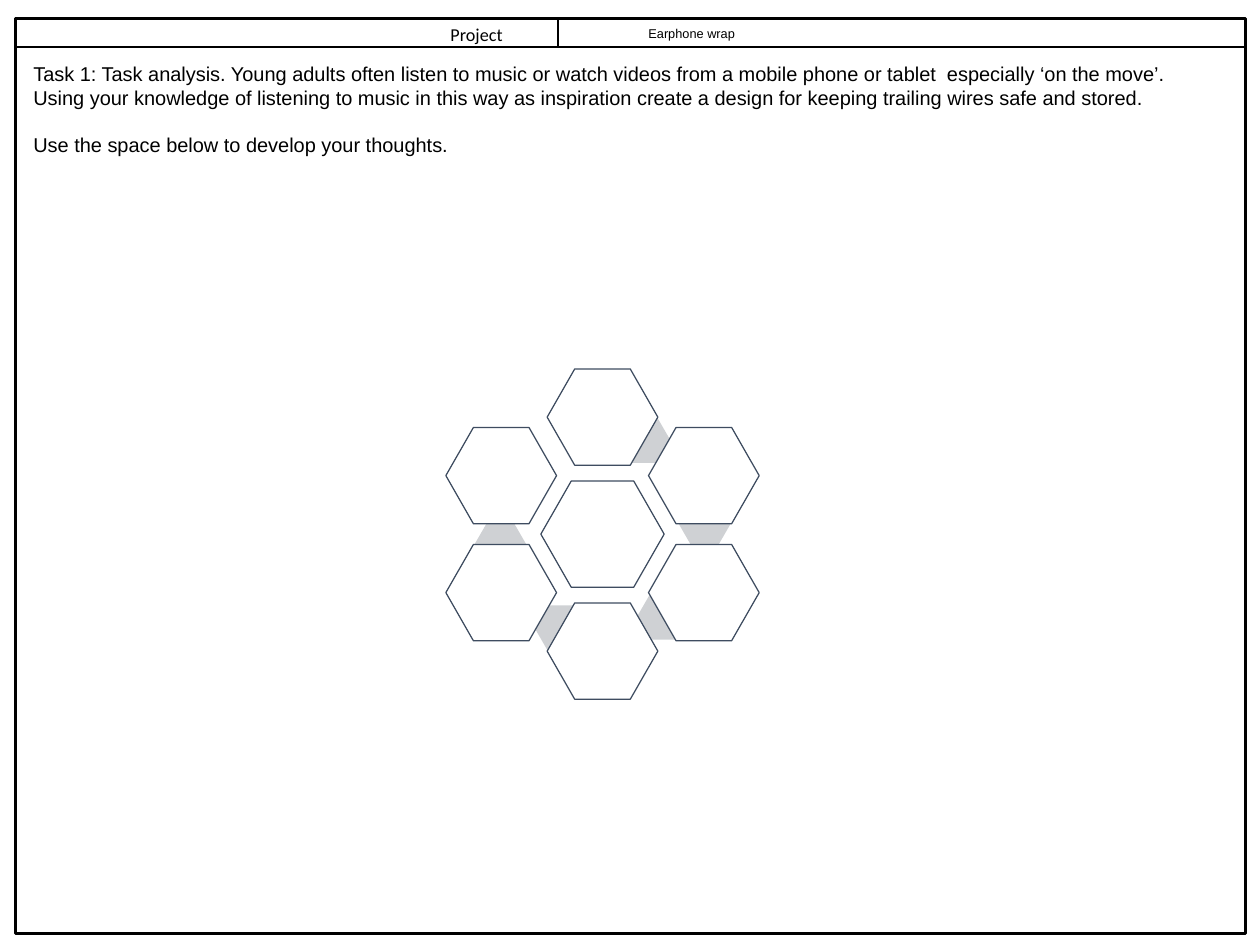
from math import cos, radians, sin

from lxml.etree import SubElement
from pptx import Presentation
from pptx.dml.color import RGBColor
from pptx.enum.shapes import MSO_CONNECTOR, MSO_SHAPE
from pptx.enum.text import MSO_ANCHOR, MSO_AUTO_SIZE, PP_ALIGN
from pptx.oxml.ns import qn
from pptx.util import Inches, Pt

BLACK = RGBColor(0x00, 0x00, 0x00)
WHITE = RGBColor(0xFF, 0xFF, 0xFF)
SLATE = RGBColor(0x3E, 0x4C, 0x60)
GREY = RGBColor(0xCF, 0xD1, 0xD4)

TASK = (
    "Task 1: Task analysis. Young adults often listen to music or watch videos "
    "from a mobile phone or tablet  especially ‘on the move’. Using your knowledge "
    "of listening to music in this way as inspiration create a design for keeping "
    "trailing wires safe and stored."
)
PROMPT = "Use the space below to develop your thoughts."


def place(shape, left, top, width, height):
    shape.left, shape.top = Inches(left), Inches(top)
    shape.width, shape.height = Inches(width), Inches(height)


def write(shape, lines, font, size, align=PP_ALIGN.LEFT, wrap=True):
    frame = shape.text_frame
    frame.text = "\n".join(lines)
    frame.word_wrap = wrap
    frame.auto_size = MSO_AUTO_SIZE.NONE
    frame.vertical_anchor = MSO_ANCHOR.TOP
    for para in frame.paragraphs:
        para.alignment = align
        para.space_before = Pt(0)
        for span in para.runs:
            span.font.name = font
            span.font.size = Pt(size)
            span.font.color.rgb = BLACK


def add_rule(page, x1, y1, x2, y2):
    rule = page.shapes.add_connector(
        MSO_CONNECTOR.STRAIGHT, Inches(x1), Inches(y1), Inches(x2), Inches(y2)
    )
    rule.line.color.rgb = BLACK
    rule.line.width = Pt(1.5)
    SubElement(rule._element.spPr, qn("a:effectLst"))


def add_frame(page, left, top, width, height):
    border = page.shapes.add_shape(
        MSO_SHAPE.RECTANGLE, Inches(left), Inches(top), Inches(width), Inches(height)
    )
    border.shadow.inherit = False
    border.fill.background()
    border.line.color.rgb = BLACK
    border.line.width = Pt(2.25)


def add_header(page, left, top, width, height):
    divider = left + 6.03
    add_rule(page, left, top + height, left + width, top + height)
    add_rule(page, divider, top + height, divider, top)
    title = page.shapes.title
    place(title, left + 4.73, top, 0.79, 0.35)
    write(title, ["Project"], "Calibri", 14.5, PP_ALIGN.CENTER, wrap=False)
    name = page.shapes.add_textbox(0, 0, 0, 0)
    place(name, left + 6.91, top + 0.03, 1.21, 0.27)
    write(name, ["Earphone wrap"], "Arial", 10.2, PP_ALIGN.CENTER, wrap=False)


def add_task(page, left, top, width, height):
    body = page.placeholders[1]
    place(body, left, top, width, height)
    write(body, [TASK, PROMPT], "Arial", 16)
    for para in body.text_frame.paragraphs:
        properties = para._p.get_or_add_pPr()
        properties.set("marL", "0")
        properties.set("indent", "0")
        SubElement(properties, qn("a:buNone"))
    body.text_frame.paragraphs[1].space_before = Pt(19)


def add_hexagon(page, x, y, width, height, fill, outline=None):
    hexagon = page.shapes.add_shape(
        MSO_SHAPE.HEXAGON,
        Inches(x - width / 2), Inches(y - height / 2), Inches(width), Inches(height),
    )
    hexagon.adjustments[0] = 0.286 if outline else 0.289
    hexagon.shadow.inherit = False
    hexagon.fill.solid()
    hexagon.fill.fore_color.rgb = fill
    if outline:
        hexagon.line.color.rgb = outline
        hexagon.line.width = Pt(1)
    else:
        hexagon.line.fill.background()


def around(x, y, radius, angle):
    turn = radians(angle)
    return x + radius * sin(turn), y - radius * cos(turn)


def add_honeycomb(page, left, top, width, height):
    x, y = left + width / 2, top + height / 2
    add_hexagon(page, x, y, 1.37, 1.18, WHITE, SLATE)
    for angle in range(0, 360, 60):
        if angle < 300:
            add_hexagon(page, *around(x, y, 1.14, angle + 24.5), 0.57, 0.49, GREY)
        add_hexagon(page, *around(x, y, 1.3, angle), 1.23, 1.07, WHITE, SLATE)


def main():
    deck = Presentation()
    deck.slide_width, deck.slide_height = Inches(14), Inches(10.5)
    page = deck.slides.add_slide(deck.slide_layouts[1])
    add_frame(page, 0.17, 0.21, 13.67, 10.16)
    add_header(page, 0.17, 0.21, 13.67, 0.31)
    add_task(page, 0.27, 0.63, 13.3, 1.18)
    add_honeycomb(page, 4.95, 4.1, 3.49, 3.67)
    deck.save("out.pptx")


if __name__ == "__main__":
    main()
